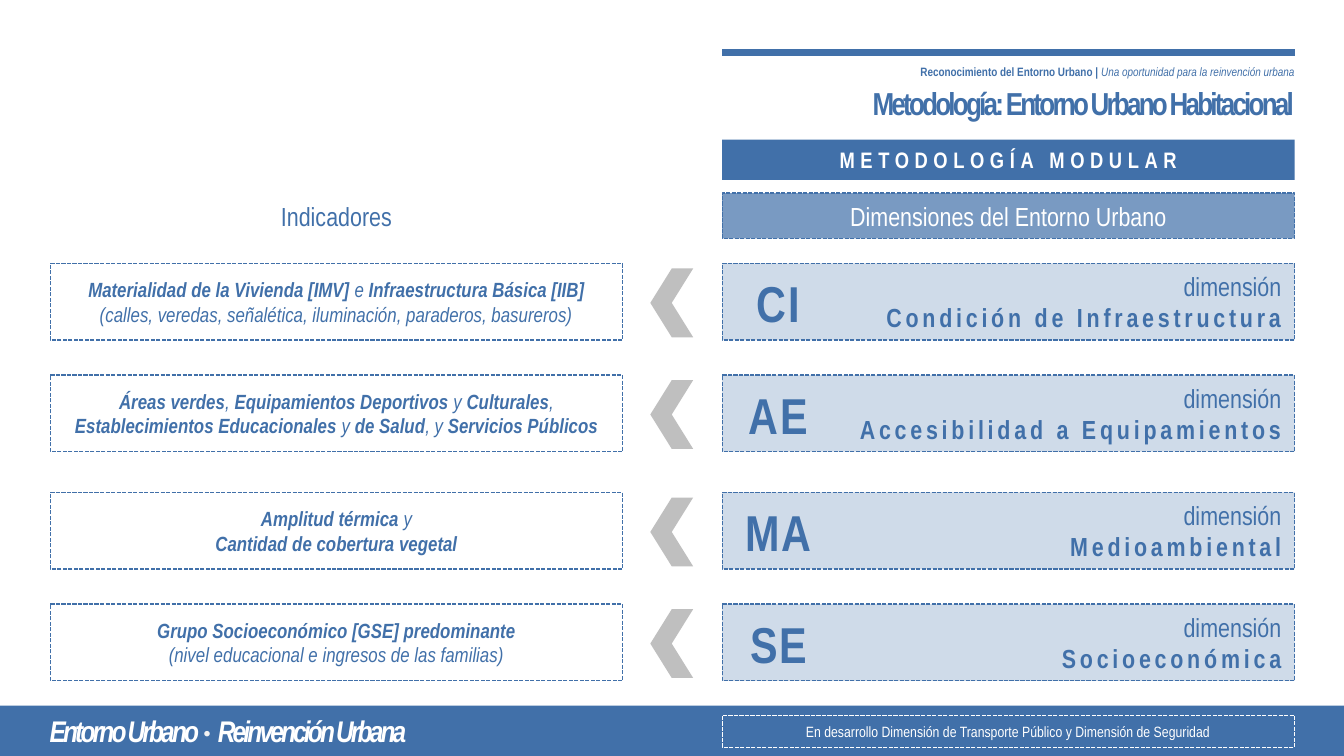
"""Build the slide on the modular methodology for the residential urban environment."""
from dataclasses import dataclass

from lxml import etree
from pptx import Presentation
from pptx import util as u
from pptx.dml.color import RGBColor
from pptx.enum import dml, shapes, text
from pptx.oxml.ns import qn

TITLE = "Metodología: Entorno Urbano Habitacional"
METHOD = "METODOLOGÍA MODULAR"
INDICATORS, DIMENSIONS = "Indicadores", "Dimensiones del Entorno Urbano"
PENDING = "En desarrollo Dimensión de Transporte Público y Dimensión de Seguridad"
TAGLINE = ("Reconocimiento del Entorno Urbano | ", "Una oportunidad para la reinvención urbana")
BRAND = ("Entorno Urbano ", "· ", "Reinvención Urbana")
# Asterisks enclose the bold words of each indicator.
ROWS = [
    (4.98, "CI", "Condición de Infraestructura",
     ["*Materialidad de la Vivienda [IMV]* e *Infraestructura Básica [IIB]*"
      " (calles, veredas, señalética, iluminación, paraderos, basureros)"]),
    (7.09, "AE", "Accesibilidad a Equipamientos",
     ["*Áreas verdes*, *Equipamientos Deportivos *y* Culturales*,",
      "*Establecimientos Educacionales *y* de Salud*, y *Servicios Públicos*"]),
    (9.31, "MA", "Medioambiental",
     ["*Amplitud térmica *y", "*Cantidad de cobertura vegetal*"]),
    (11.42, "SE", "Socioeconómica",
     ["*Grupo Socioeconómico [GSE] predominante*",
      "(nivel educacional e ingresos de las familias)"]),
]


@dataclass(frozen=True)
class Theme:
    font: str = "Arial Narrow"
    dot_font: str = "Calibri"
    blue: str = "4170A9"
    white: str = "FFFFFF"
    dot: str = "F2F2F2"
    grey: str = "BFBFBF"
    title: float = 17
    brand: float = 16
    heading: float = 14
    method: float = 12
    code: float = 27
    indicator: float = 11
    pending: float = 8
    tagline: float = 6.5


THEME = Theme()
LEFT, RIGHT, COLUMN = 0.95, 13.65, 10.82
ROW_HEIGHT, CODE_WIDTH = 1.45, 2.13
CHEVRON_LEFT, CHEVRON_WIDTH, CHEVRON_HEIGHT = 12.29, 0.81, 1.3
ALIGN = text.PP_ALIGN

deck = Presentation()
deck.slide_width, deck.slide_height = u.Cm(25.4), u.Cm(14.29)
slide = deck.slides.add_slide(deck.slide_layouts[5])


def style(font, size, color=THEME.blue, bold=False, italic=False, name=THEME.font):
    font.name, font.size, font.bold, font.italic = name, u.Pt(size), bold, italic
    font.color.rgb = RGBColor.from_string(color)


def block(box, kind=shapes.MSO_SHAPE.RECTANGLE, fill=None, opacity=100, border=None):
    part = slide.shapes.add_shape(kind, *map(u.Cm, box))
    part.shadow.inherit = False
    if fill:
        part.fill.solid()
        part.fill.fore_color.rgb = RGBColor.from_string(fill)
        if opacity < 100:
            color = part.fill._xPr.find(".//" + qn("a:srgbClr"))
            etree.SubElement(color, qn("a:alpha"), val=str(opacity * 1000))
    else:
        part.fill.background()
    if border:
        part.line.color.rgb = RGBColor.from_string(border)
        part.line.width = u.Pt(0.75)
        part.line.dash_style = dml.MSO_LINE.SQUARE_DOT
    else:
        part.line.fill.background()
    return part


def label(box):
    return slide.shapes.add_textbox(*map(u.Cm, box))


def write(part, lines, align=ALIGN.CENTER):
    """Fill a shape with lines of (text, spacing) runs and return its paragraphs."""
    frame = part.text_frame
    frame.word_wrap = True
    frame.auto_size = text.MSO_AUTO_SIZE.NONE
    frame.vertical_anchor = text.MSO_ANCHOR.MIDDLE
    for number, line in enumerate(lines):
        paragraph = frame.add_paragraph() if number else frame.paragraphs[0]
        paragraph.alignment = align
        for words, spacing in line:
            run = paragraph.add_run()
            run.text = words
            if spacing:
                run._r.get_or_add_rPr().set("spc", str(round(spacing * 100)))
    return frame.paragraphs


def write_line(part, words, size, color=THEME.blue, bold=False, spacing=0,
               align=ALIGN.CENTER):
    paragraph, = write(part, [[(words, spacing)]], align)
    style(paragraph.font, size, color, bold)


def add_header():
    title = slide.shapes.title
    title.left, title.top, title.width, title.height = map(u.Cm, (RIGHT, 1.45, 11.05, 0.99))
    write_line(title, TITLE, THEME.title, bold=True, spacing=-1.5, align=ALIGN.RIGHT)

    rule = slide.shapes.add_connector(
        shapes.MSO_CONNECTOR.STRAIGHT, *map(u.Cm, (RIGHT, 0.99, RIGHT + COLUMN, 0.99)))
    rule.line.color.rgb = RGBColor.from_string(THEME.blue)
    rule.line.width = u.Pt(3.5)
    etree.SubElement(rule._element.spPr, qn("a:effectLst"))

    tagline, = write(label((RIGHT, 1.09, 11.07, 0.53)),
                     [[(words, 0) for words in TAGLINE]], ALIGN.RIGHT)
    for run, strong in zip(tagline.runs, (True, False)):
        style(run.font, THEME.tagline, bold=strong, italic=not strong)

    write_line(block((RIGHT, 2.64, COLUMN, 0.76), fill=THEME.blue),
               METHOD, THEME.method, THEME.white, True, 3)
    write_line(label((LEFT, 3.65, COLUMN, 0.86)), INDICATORS, THEME.heading)
    write_line(block((RIGHT, 3.65, COLUMN, 0.86), fill=THEME.blue, opacity=70,
                     border=THEME.blue), DIMENSIONS, THEME.heading, THEME.white)


def add_row(top, code, dimension, indicators):
    indicator_box = block((LEFT, top, COLUMN, ROW_HEIGHT), border=THEME.blue)
    split_lines = [line.split("*") for line in indicators]
    paragraphs = write(indicator_box, [[(words, 0) for words in parts if words]
                                       for parts in split_lines])
    for paragraph, parts in zip(paragraphs, split_lines):
        weights = [index % 2 == 1 for index, words in enumerate(parts) if words]
        for run, strong in zip(paragraph.runs, weights):
            style(run.font, THEME.indicator, bold=strong, italic=True)

    chevron_top = top + (ROW_HEIGHT - CHEVRON_HEIGHT) / 2 + 0.02
    chevron = block((CHEVRON_LEFT, chevron_top, CHEVRON_WIDTH, CHEVRON_HEIGHT),
                    shapes.MSO_SHAPE.CHEVRON, THEME.grey)
    chevron.rotation = 180

    dimension_box = block((RIGHT, top, COLUMN, ROW_HEIGHT), fill=THEME.blue, opacity=25,
                          border=THEME.blue)
    caption, name = write(dimension_box, [[("dimensión", 0)], [(dimension, 2)]], ALIGN.RIGHT)
    style(caption.font, THEME.heading)
    style(name.font, THEME.heading, bold=True)
    write_line(label((RIGHT, top + 0.03, CODE_WIDTH, 1.42)), code, THEME.code,
               bold=True, spacing=1)


def add_footer():
    block((0, 13.34, 25.4, 0.95), fill=THEME.blue)
    brand, = write(label((0.69, 13.34, 11.81, 0.94)),
                   [list(zip(BRAND, (-1.5, 0, -1.5)))], ALIGN.LEFT)
    first, dot, last = brand.runs
    for run in (first, last):
        style(run.font, THEME.brand, THEME.white, True, True)
    style(dot.font, THEME.brand, THEME.dot, True, name=THEME.dot_font)
    write_line(block((RIGHT, 13.52, COLUMN, 0.61), border=THEME.white),
               PENDING, THEME.pending, THEME.white)


add_header()
for row in ROWS:
    add_row(*row)
add_footer()
deck.save("out.pptx")
